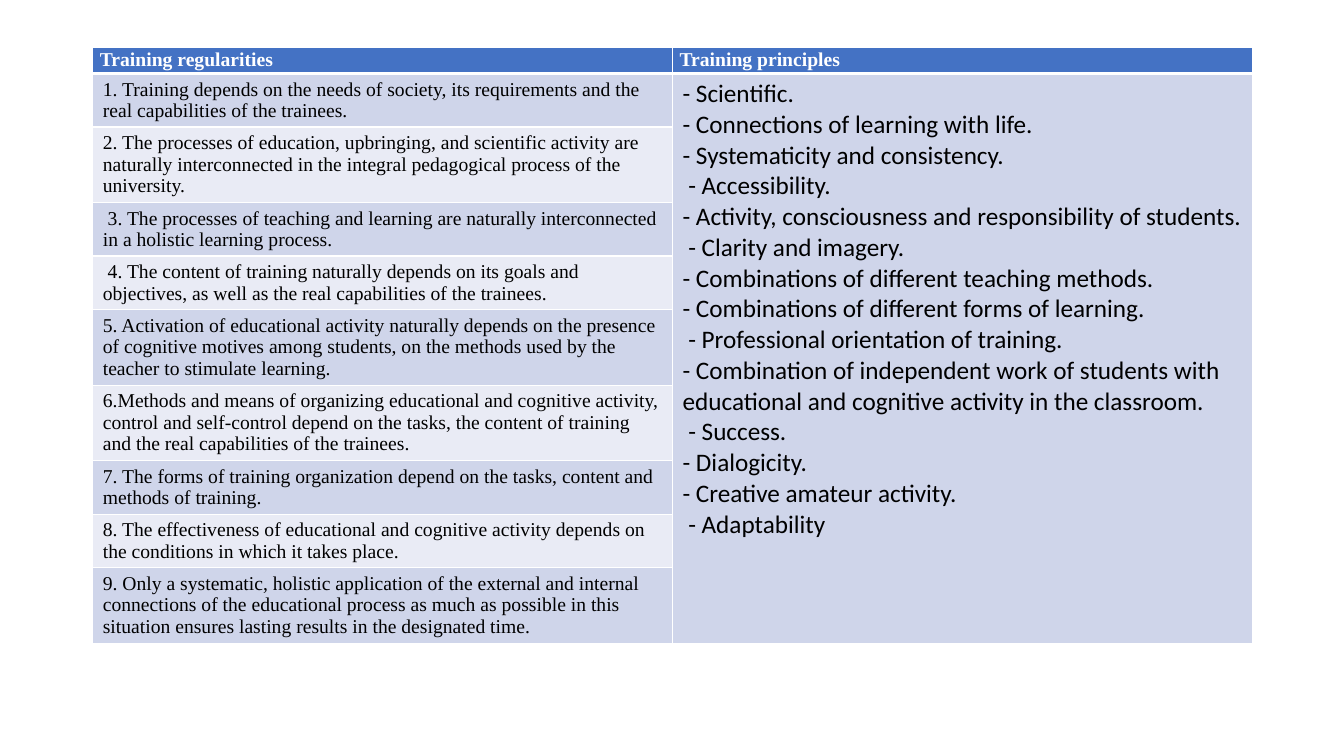
from lxml import etree
from pptx import Presentation
from pptx.dml.color import RGBColor
from pptx.oxml.ns import qn
from pptx.util import Pt

PX = 9144  # EMU per px, 100 px to the inch
SLIDE_W, SLIDE_H = 1333, 750
WHITE, BLACK = "FFFFFF", "000000"
HEADER_FILL, BANDS = "4472C4", ("CFD5EA", "E9EBF5")

HEADERS = ["Training regularities", "Training principles"]
REGULARITIES = [  # text, row height
    ("1. Training depends on the needs of society, its requirements and the real capabilities of the trainees.", 53),
    ("2. The processes of education, upbringing, and scientific activity are naturally interconnected "
     "in the integral pedagogical process of the university.", 75),
    (" 3. The processes of teaching and learning are naturally interconnected in a holistic learning process.", 53),
    (" 4. The content of training naturally depends on its goals and objectives, "
     "as well as the real capabilities of the trainees.", 53),
    ("5. Activation of educational activity naturally depends on the presence of cognitive motives "
     "among students, on the methods used by the teacher to stimulate learning.", 75),
    ("6.Methods and means of organizing educational and cognitive activity, control and self-control "
     "depend on the tasks, the content of training and the real capabilities of the trainees.", 75),
    ("7. The forms of training organization depend on the tasks, content and methods of training.", 53),
    ("8. The effectiveness of educational and cognitive activity depends on the conditions "
     "in which it takes place.", 53),
    ("9. Only a systematic, holistic application of the external and internal connections of the "
     "educational process as much as possible in this situation ensures lasting results in the designated time.", 75),
]
PRINCIPLES = [
    "- Scientific.",
    "- Connections of learning with life.",
    "- Systematicity and consistency.",
    " - Accessibility.",
    "- Activity, consciousness and responsibility of students.",
    " - Clarity and imagery.",
    "- Combinations of different teaching methods.",
    "- Combinations of different forms of learning.",
    " - Professional orientation of training.",
    "- Combination of independent work of students with educational and cognitive activity in the classroom.",
    " - Success.",
    "- Dialogicity.",
    "- Creative amateur activity.",
    " - Adaptability",
]

HEADER_FONT = {"name": "Times New Roman", "size": Pt(14), "bold": True}
REGULARITY_FONT = {"name": "Times New Roman", "size": Pt(14), "bold": False}
PRINCIPLE_FONT = {"name": "Calibri", "size": Pt(18), "bold": False}
HEADER_MARGINS = {"margin_left": 7 * PX, "margin_right": 7 * PX, "margin_top": 0, "margin_bottom": 0}
HEADER_SPACING = {"line_spacing": 1.07, "space_after": Pt(8)}


def rgb(value):
    return RGBColor.from_string(value)


def set_format(target, values):
    for name, value in values.items():
        setattr(target, name, value)


def set_borders(cell, top=1, bottom=1):
    """Draw white borders, with widths in points."""
    tcPr = cell._tc.get_or_add_tcPr()
    for i, (side, width) in enumerate((("L", 1), ("R", 1), ("T", top), ("B", bottom))):
        ln = etree.Element(qn("a:ln" + side), w=str(Pt(width)))
        fill = etree.SubElement(ln, qn("a:solidFill"))
        etree.SubElement(fill, qn("a:srgbClr"), val=WHITE)
        tcPr.insert(i, ln)


def style_cell(cell, fill, top=1, bottom=1):
    cell.fill.solid()
    cell.fill.fore_color.rgb = rgb(fill)
    set_borders(cell, top, bottom)


def write_cell(cell, lines, font, color, spacing=None):
    tf = cell.text_frame
    for i, line in enumerate(lines):
        p = tf.paragraphs[0] if i == 0 else tf.add_paragraph()
        set_format(p, spacing or {})
        r = p.add_run()
        r.text = line
        set_format(r.font, font)
        r.font.color.rgb = rgb(color)


def add_training_table(s, x, y, w, header_h):
    heights = [header_h] + [h for _, h in REGULARITIES]
    frame = s.shapes.add_table(len(heights), len(HEADERS), x * PX, y * PX, w * PX, sum(heights) * PX)
    table = frame.table
    for column in table.columns:
        column.width = w * PX // len(HEADERS)
    for row, height in zip(table.rows, heights):
        row.height = height * PX

    for col, title in enumerate(HEADERS):
        cell = table.cell(0, col)
        style_cell(cell, HEADER_FILL, bottom=3)
        set_format(cell, HEADER_MARGINS)
        write_cell(cell, [title], HEADER_FONT, WHITE, HEADER_SPACING)

    for i, (text, _) in enumerate(REGULARITIES):
        top = 3 if i == 0 else 1
        style_cell(table.cell(i + 1, 0), BANDS[i % 2], top)
        style_cell(table.cell(i + 1, 1), BANDS[0], top)
        write_cell(table.cell(i + 1, 0), [text], REGULARITY_FONT, BLACK)

    principles = table.cell(1, 1)
    principles.merge(table.cell(len(REGULARITIES), 1))
    write_cell(principles, PRINCIPLES, PRINCIPLE_FONT, BLACK)


def main():
    prs = Presentation()
    prs.slide_width, prs.slide_height = SLIDE_W * PX, SLIDE_H * PX
    s = prs.slides.add_slide(prs.slide_layouts[6])
    add_training_table(s, 92, 47, 1150, 26)
    prs.save("out.pptx")


if __name__ == "__main__":
    main()
